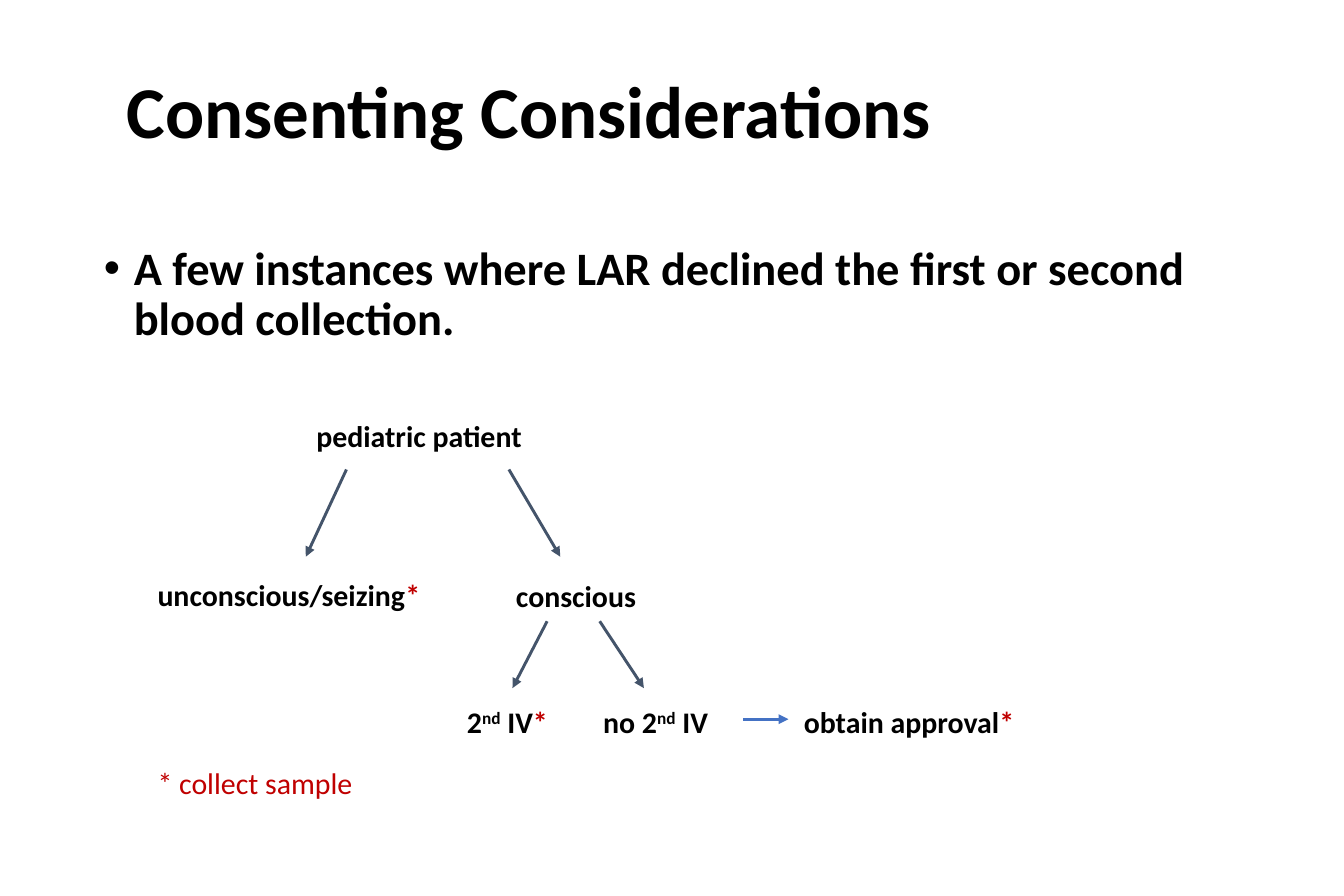
import pptx
import pptx.util
import pptx.dml.color
import pptx.enum.shapes
import pptx.enum.text
import lxml.etree

Inches, Pt = pptx.util.Inches, pptx.util.Pt
BLACK, RED, SLATE, BLUE = "000000", "C00000", "44546A", "4472C4"


def paint(color, tone):
    color.rgb = pptx.dml.color.RGBColor.from_string(tone)


def style(run, size, tone=BLACK, bold=True):
    run.font.name = "Calibri"
    run.font.size = Pt(size)
    run.font.bold = bold
    paint(run.font.color, tone)


deck = pptx.Presentation()
deck.slide_width, deck.slide_height = Inches(11.25), Inches(7.5)
slide = deck.slides.add_slide(deck.slide_layouts[1])
shapes = slide.shapes

# Title and bullet
heads = [
    (shapes.title, (0.96, 0.42, 9, 1.08), 44, 0, "Consenting Considerations"),
    (slide.placeholders[1], (0.77, 2, 9.7, 4.76), 28, 10,
     "A few instances where LAR declined the first or second blood collection."),
]
for holder, place, size, gap, text in heads:
    holder.left, holder.top, holder.width, holder.height = map(Inches, place)
    holder.text_frame.text = text
    holder.text_frame.auto_size = pptx.enum.text.MSO_AUTO_SIZE.NONE
    line = holder.text_frame.paragraphs[0]
    line.alignment = pptx.enum.text.PP_ALIGN.LEFT
    line.line_spacing = 0.9
    line.space_before = Pt(gap)
    style(line.runs[0], size)
shapes.title.text_frame.vertical_anchor = pptx.enum.text.MSO_ANCHOR.MIDDLE

# Hanging indent and bullet sign
props = line._p.get_or_add_pPr()
props.set("marL", str(Inches(0.25)))
props.set("indent", str(Inches(-0.25)))
space = pptx.oxml.ns.nsdecls("a")
for mark in ('<a:buFont %s typeface="Arial"/>', '<a:buChar %s char="•"/>'):
    props.append(pptx.oxml.parse_xml(mark % space))

# Tree labels: left, top, width, runs
labels = [
    (2.55, 3.45, 1.94, ["pediatric patient"]),
    (1.22, 4.78, 2.41, ["unconscious/seizing", "*"]),
    (4.22, 4.79, 1.21, ["conscious"]),
    (3.81, 5.84, 0.91, ["2", "nd", " IV", "*"]),
    (4.95, 5.84, 1.17, ["no 2", "nd", " IV"]),
    (6.63, 5.84, 1.98, ["obtain approval", "*"]),
    (1.22, 6.35, 1.85, ["* collect sample"]),
]
for left, top, width, parts in labels:
    box = shapes.add_textbox(Inches(left), Inches(top), Inches(width), Inches(0.4))
    frame = box.text_frame
    frame.word_wrap = False
    frame.auto_size = pptx.enum.text.MSO_AUTO_SIZE.SHAPE_TO_FIT_TEXT
    for part in parts:
        run = frame.paragraphs[0].add_run()
        run.text = part
        legend = part.startswith("* ")
        style(run, 18, RED if part.startswith("*") else BLACK, not legend)
        if part == "nd":
            run.font._element.set("baseline", "30000")

# Arrows: start, end, colour
arrows = [
    (2.9, 3.93, 2.56, 4.66, SLATE),
    (4.26, 3.93, 4.69, 4.66, SLATE),
    (5.02, 5.2, 5.39, 5.76, SLATE),
    (4.58, 5.2, 4.29, 5.76, SLATE),
    (6.22, 6.02, 6.6, 6.02, BLUE),
]
for *ends, tone in arrows:
    arrow = shapes.add_connector(
        pptx.enum.shapes.MSO_CONNECTOR.STRAIGHT, *map(Inches, ends))
    arrow.line.width = Pt(1.75)
    paint(arrow.line.color, tone)
    tail = pptx.oxml.ns.qn("a:tailEnd")
    lxml.etree.SubElement(arrow.line._get_or_add_ln(), tail, type="triangle")
    lxml.etree.SubElement(arrow._element.spPr, pptx.oxml.ns.qn("a:effectLst"))

deck.save("out.pptx")
